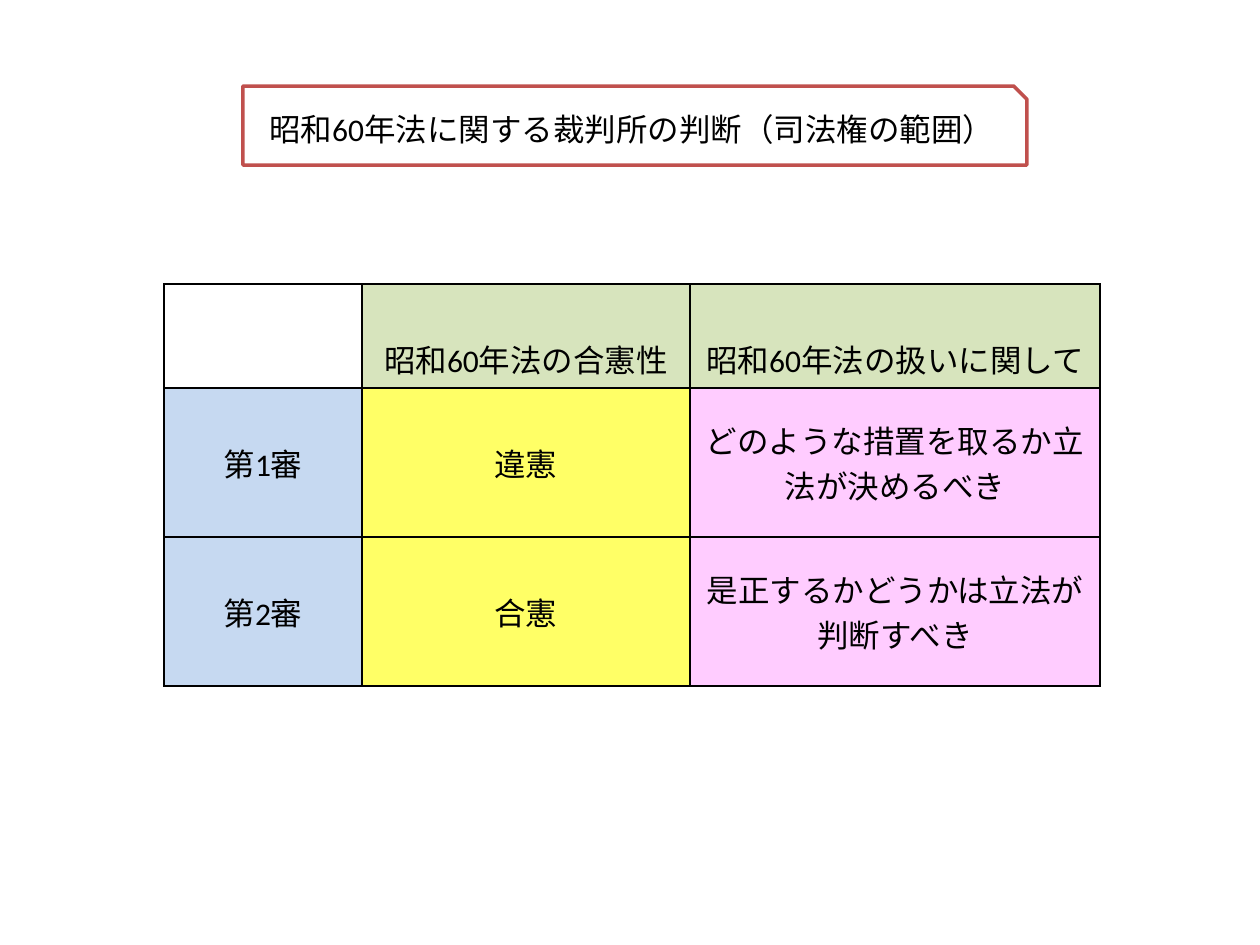
"""Build a slide on how two courts judged the Showa 60 law."""
from lxml.etree import SubElement as Sub
from pptx import Presentation
from pptx.dml.color import RGBColor
from pptx.enum.shapes import MSO_SHAPE as Shape
from pptx.enum.text import MSO_ANCHOR as Anchor, PP_ALIGN as Align
from pptx.oxml import parse_xml
from pptx.oxml.ns import nsdecls, qn
from pptx.util import Pt

PX = 914400 // 126


def tint(code):
    return RGBColor.from_string(code)


def write(frame, text):
    para = frame.paragraphs[0]
    para.alignment = Align.CENTER
    para.text = text
    font = {"name": "Calibri", "size": Pt(18), "bold": False}
    for key, val in font.items():
        setattr(para.font, key, val)
        for run in para.runs:
            setattr(run.font, key, val)
    for run in para.runs:
        run.font.color.rgb = tint("000000")


deck = Presentation()
deck.slide_width, deck.slide_height = 1260 * PX, 945 * PX
slide = deck.slides.add_slide(deck.slide_layouts[6])

rows = [
    ["", "昭和60年法の合憲性", "昭和60年法の扱いに関して"],
    ["第1審", "違憲", "どのような措置を取るか立法が決めるべき"],
    ["第2審", "合憲", "是正するかどうかは立法が判断すべき"],
]
wides = [198, 328, 410]
highs = [69, 149, 149]
fills = ["C6D9F1", "FFFF66", "FFCCFF"]
head = "D7E4BD"

frame = slide.shapes.add_table(
    len(rows), len(wides), 164 * PX, 284 * PX, sum(wides) * PX, sum(highs) * PX
)
table = frame.table
table.first_row = table.horz_banding = False
for col, wide in zip(table.columns, wides):
    col.width = wide * PX
for row, high in zip(table.rows, highs):
    row.height = high * PX

for r, texts in enumerate(rows):
    for c, text in enumerate(texts):
        cell = table.cell(r, c)
        write(cell.text_frame, text)
        cell.vertical_anchor = Anchor.MIDDLE if r else Anchor.BOTTOM
        if text:
            cell.fill.solid()
            cell.fill.fore_color.rgb = tint(fills[c] if r else head)
        else:
            cell.fill.background()
        props = cell._tc.get_or_add_tcPr()
        for i, side in enumerate(["lnL", "lnR", "lnT", "lnB"]):
            edge = parse_xml(f'<a:{side} {nsdecls("a")} w="{Pt(1)}"/>')
            paint = Sub(edge, qn("a:solidFill"))
            Sub(paint, qn("a:srgbClr"), val="000000")
            props.insert(i, edge)

title = slide.shapes.add_shape(
    Shape.SNIP_1_RECTANGLE, 243 * PX, 86 * PX, 784 * PX, 79 * PX
)
title.shadow.inherit = False
title.fill.solid()
title.fill.fore_color.rgb = tint("FFFFFF")
title.line.color.rgb = tint("C0504D")
title.line.width = Pt(2)
title.text_frame.vertical_anchor = Anchor.MIDDLE
write(title.text_frame, "昭和60年法に関する裁判所の判断（司法権の範囲）")

deck.save("out.pptx")
